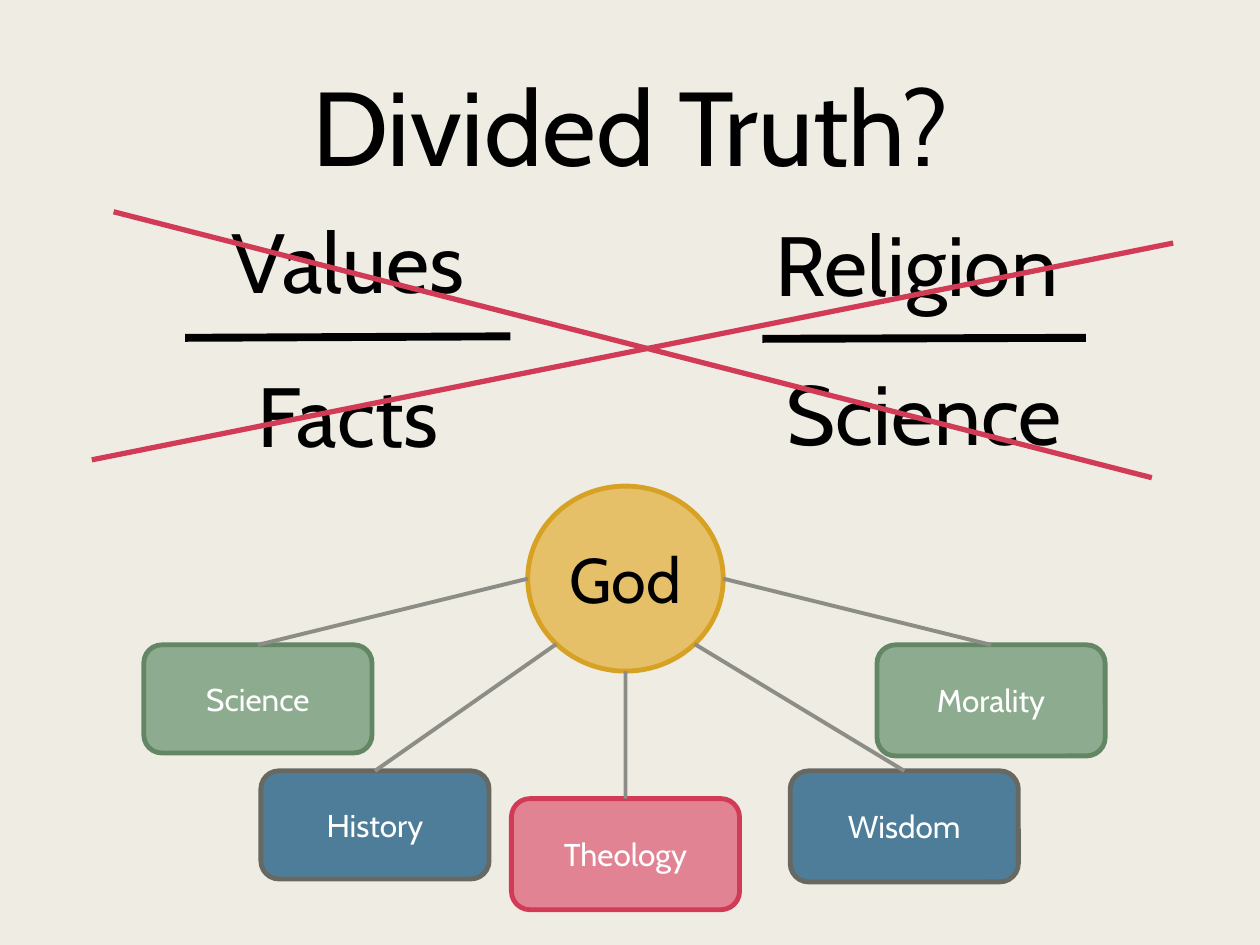
from math import cos, radians, sin

from pptx import Presentation
from pptx.dml.color import RGBColor
from pptx.enum.shapes import MSO_CONNECTOR as Connector, MSO_SHAPE as Shape
from pptx.enum.text import MSO_ANCHOR as Anchor, MSO_AUTO_SIZE as AutoSize, PP_ALIGN as Align
from pptx.oxml.ns import qn
from pptx.util import Cm, Pt

COLOURS = {
    "paper": "EFEDE3", "black": "000000", "white": "FFFFFF", "grey": "8C8D86",
    "gold": "E6C069", "gold_edge": "D7A124",
    "green": "8DAB8E", "green_edge": "638764",
    "blue": "4D7D99", "blue_edge": "686863",
    "pink": "E28394", "red": "D13B56",
}


class SlideBuilder:
    font_name = "Cabin"
    edge_width = 2.75

    def __init__(self, slide):
        self.slide = slide
        self.paint(slide.background.fill, "paper")

    def paint(self, fill, colour):
        fill.solid()
        fill.fore_color.rgb = RGBColor.from_string(COLOURS[colour])

    def add_text(self, frame, text, size, colour):
        paragraph = frame.paragraphs[0]
        paragraph.alignment = Align.CENTER
        run = paragraph.add_run()
        run.text = text
        run.font.name = self.font_name
        run.font.size = Pt(size)
        run.font.color.rgb = RGBColor.from_string(COLOURS[colour])

    def label(self, text, left, top, width, height=2.31, size=48):
        box = self.slide.shapes.add_textbox(Cm(left), Cm(top), Cm(width), Cm(height))
        box.text_frame.word_wrap = True
        box.text_frame.auto_size = AutoSize.SHAPE_TO_FIT_TEXT
        self.add_text(box.text_frame, text, size, "black")

    def node(self, kind, text, place, fill, edge, size=18, colour="white"):
        shape = self.slide.shapes.add_shape(kind, *(Cm(length) for length in place))
        shape.shadow.inherit = False
        self.paint(shape.fill, fill)
        self.paint(shape.line.fill, edge)
        shape.line.width = Pt(self.edge_width)
        shape.text_frame.word_wrap = True
        shape.text_frame.vertical_anchor = Anchor.MIDDLE
        self.add_text(shape.text_frame, text, size, colour)
        return shape

    def line(self, start, end, colour, width):
        points = (Cm(length) for length in (*start, *end))
        connector = self.slide.shapes.add_connector(Connector.STRAIGHT, *points)
        self.paint(connector.line.fill, colour)
        connector.line.width = Pt(width)
        properties = connector._element.spPr
        properties.append(properties.makeelement(qn("a:effectLst"), {}))
        return connector


def main():
    presentation = Presentation()
    presentation.slide_width, presentation.slide_height = Cm(25.4), Cm(19.05)
    builder = SlideBuilder(presentation.slides.add_slide(presentation.slide_layouts[6]))

    # Title and the two fractions
    builder.label("Values", 4.19, 4.09, 5.66)
    builder.label("Facts", 4.19, 7.21, 5.66)
    builder.line((3.73, 6.81), (10.29, 6.78), "black", 4.5)
    builder.label("Religion", 15.21, 4.17, 6.55)
    builder.line((15.37, 6.83), (21.89, 6.81), "black", 4.5)
    builder.label("Science", 15.19, 7.16, 6.88)
    builder.label("Divided Truth?", 4.11, 1.12, 17.2, 2.82, size=60)

    # Central circle
    left, top, width, height = circle = (10.64, 9.8, 3.94, 3.73)
    builder.node(Shape.OVAL, "God", circle, "gold", "gold_edge", 36, "black")

    # Fields of knowledge, spread below the circle in steps of 45 degrees
    fields = [
        ("Science", 2.9, 13, 2.18, "green", "green_edge"),
        ("History", 5.26, 15.54, 2.18, "blue", "blue_edge"),
        ("Theology", 10.31, 16.1, 2.24, "pink", "red"),
        ("Wisdom", 15.93, 15.54, 2.24, "blue", "blue_edge"),
        ("Morality", 17.68, 13, 2.24, "green", "green_edge"),
    ]
    box_width = 4.6
    for step, (text, x, y, box_height, fill, edge) in enumerate(fields):
        place = (x, y, box_width, box_height)
        box = builder.node(Shape.ROUNDED_RECTANGLE, text, place, fill, edge)
        angle = radians(180 - 45 * step)
        rim = (left + width / 2 * (1 + cos(angle)), top + height / 2 * (1 + sin(angle)))
        spoke = builder.line(rim, (x + box_width / 2, y), "grey", 2.25)
        spoke.end_connect(box, 0)

    # Red cross over the fractions
    builder.line((23.65, 4.9), (1.85, 9.27), "red", 3)
    builder.line((2.29, 4.27), (23.22, 9.63), "red", 3)

    presentation.save("out.pptx")


if __name__ == "__main__":
    main()
